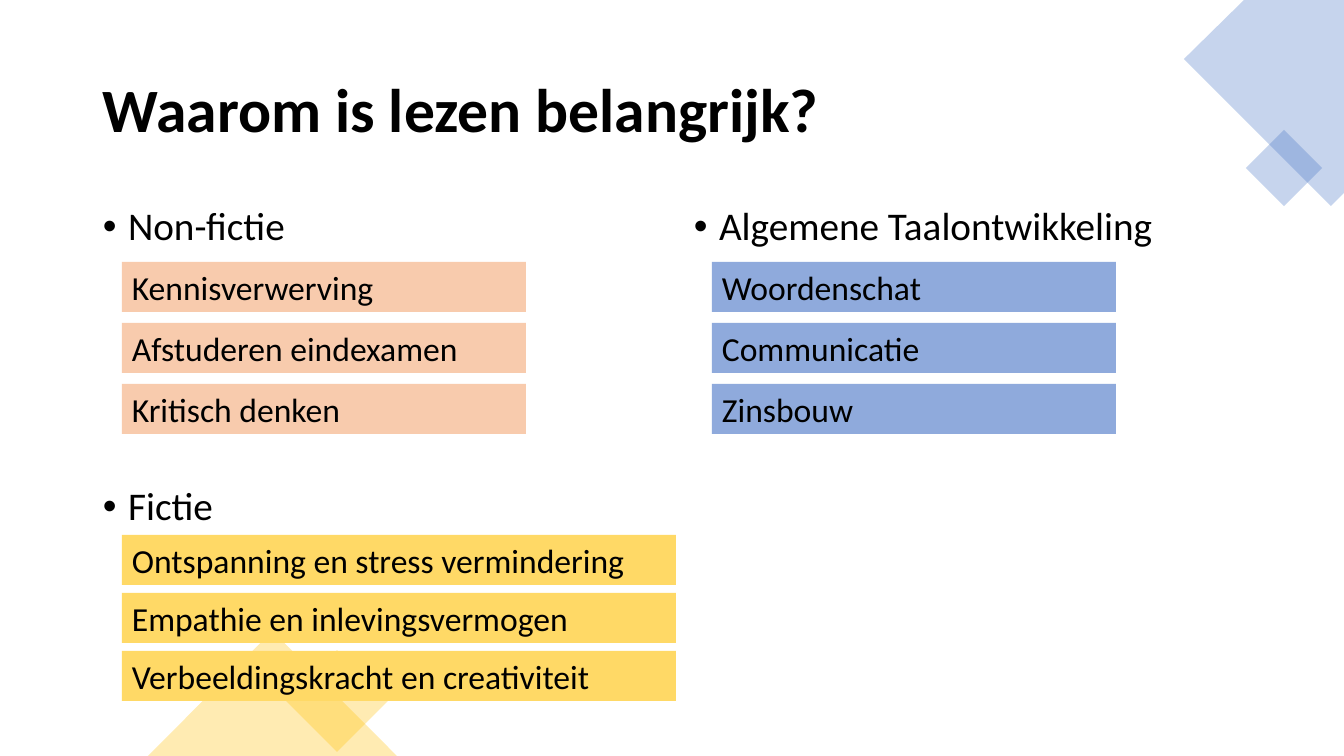
from lxml.etree import SubElement
from pptx import Presentation
from pptx.dml.color import RGBColor
from pptx.enum.shapes import MSO_SHAPE
from pptx.enum.text import MSO_ANCHOR, MSO_AUTO_SIZE, PP_ALIGN
from pptx.oxml.ns import qn
from pptx.util import Pt

PX = 914400 / 100.8
FONT = "Calibri"
BLACK = RGBColor(0x00, 0x00, 0x00)
BLUE = RGBColor(0x44, 0x72, 0xC4)
GOLD = RGBColor(0xFF, 0xC0, 0x00)
PEACH = RGBColor(0xF8, 0xCB, 0xAD)
YELLOW = RGBColor(0xFF, 0xD9, 0x66)
LIGHT_BLUE = RGBColor(0x8F, 0xAA, 0xDC)

BAR_HEIGHT = 50
HEADING_HEIGHT = 54
HEADING_WIDTH = 540


def px(*lengths):
    return [round(length * PX) for length in lengths]


def paint(shape, color, opacity=100):
    shape.shadow.inherit = False
    shape.line.fill.background()
    shape.fill.solid()
    shape.fill.fore_color.rgb = color
    if opacity < 100:
        color_element = shape.fill._xPr.find(qn("a:solidFill"))[0]
        SubElement(color_element, qn("a:alpha"), val=str(opacity * 1000))


def write(shape, text, size, bold=False):
    shape.text_frame.word_wrap = True
    paragraph = shape.text_frame.paragraphs[0]
    paragraph.alignment = PP_ALIGN.LEFT
    run = paragraph.add_run()
    run.text = text
    run.font.name = FONT
    run.font.size = Pt(size)
    run.font.bold = bold
    run.font.color.rgb = BLACK
    return paragraph


def add_decoration(slide, kind, box, color, rotation=0):
    shape = slide.shapes.add_shape(kind, *px(*box))
    shape.rotation = rotation
    paint(shape, color, 30)


def add_top_corner(slide, right, top):
    # Large tilted square, cut off by the slide edges
    builder = slide.shapes.build_freeform(right, top, scale=PX)
    offsets = [(-100, 0), (-160, 59), (-13, 206), (0, 193)]
    builder.add_line_segments([(right + x, top + y) for x, y in offsets])
    paint(builder.convert_to_shape(), BLUE, 30)
    # Small tilted square
    add_decoration(slide, MSO_SHAPE.RECTANGLE,
                   (right - 87, top + 141, 54, 54), BLUE, 315)


def add_bottom_corner(slide, left, bottom):
    add_decoration(slide, MSO_SHAPE.RECTANGLE,
                   (left + 153, bottom - 91, 72, 72), GOLD, 45)
    add_decoration(slide, MSO_SHAPE.ISOSCELES_TRIANGLE,
                   (left, bottom - 125, 249, 125), GOLD)


def add_title(slide, left, top, width, height):
    title = slide.shapes.add_textbox(*px(left, top, width, height))
    title.text_frame.vertical_anchor = MSO_ANCHOR.MIDDLE
    write(title, "Waarom is lezen belangrijk?", 44, bold=True).line_spacing = 0.9


def add_topic(slide, left, top, heading, items, color, indent, bar_width,
              first_bar, pitch):
    # Bulleted heading
    box = slide.shapes.add_textbox(*px(left, top, HEADING_WIDTH, HEADING_HEIGHT))
    paragraph = write(box, heading, 28)
    paragraph.line_spacing = 0.9
    properties = paragraph._p.get_or_add_pPr()
    properties.set("marL", "228600")
    properties.set("indent", "-228600")
    SubElement(properties, qn("a:buFont"), typeface="Arial")
    SubElement(properties, qn("a:buChar"), char="•")
    # Coloured bars
    for index, item in enumerate(items):
        bar_top = top + first_bar + index * pitch
        bar = slide.shapes.add_shape(
            MSO_SHAPE.RECTANGLE,
            *px(left + indent, bar_top, bar_width, BAR_HEIGHT))
        paint(bar, color)
        write(bar, item, 24)
        bar.text_frame.vertical_anchor = MSO_ANCHOR.TOP
        bar.text_frame.auto_size = MSO_AUTO_SIZE.SHAPE_TO_FIT_TEXT


def main():
    presentation = Presentation()
    presentation.slide_width, presentation.slide_height = px(1344, 756)
    slide = presentation.slides.add_slide(presentation.slide_layouts[6])

    add_top_corner(slide, 1344, 0)
    add_bottom_corner(slide, 148, 756)
    add_title(slide, 93, 40, 1159, 146)
    add_topic(slide, 93, 202, "Non-fictie",
              ["Kennisverwerving", "Afstuderen eindexamen", "Kritisch denken"],
              PEACH, indent=29, bar_width=404, first_bar=60, pitch=61)
    add_topic(slide, 93, 482, "Fictie",
              ["Ontspanning en stress vermindering",
               "Empathie en inlevingsvermogen",
               "Verbeeldingskracht en creativiteit"],
              YELLOW, indent=29, bar_width=554, first_bar=53, pitch=58)
    add_topic(slide, 684, 202, "Algemene Taalontwikkeling",
              ["Woordenschat", "Communicatie", "Zinsbouw"],
              LIGHT_BLUE, indent=28, bar_width=404, first_bar=60, pitch=61)

    presentation.save("out.pptx")


if __name__ == "__main__":
    main()
